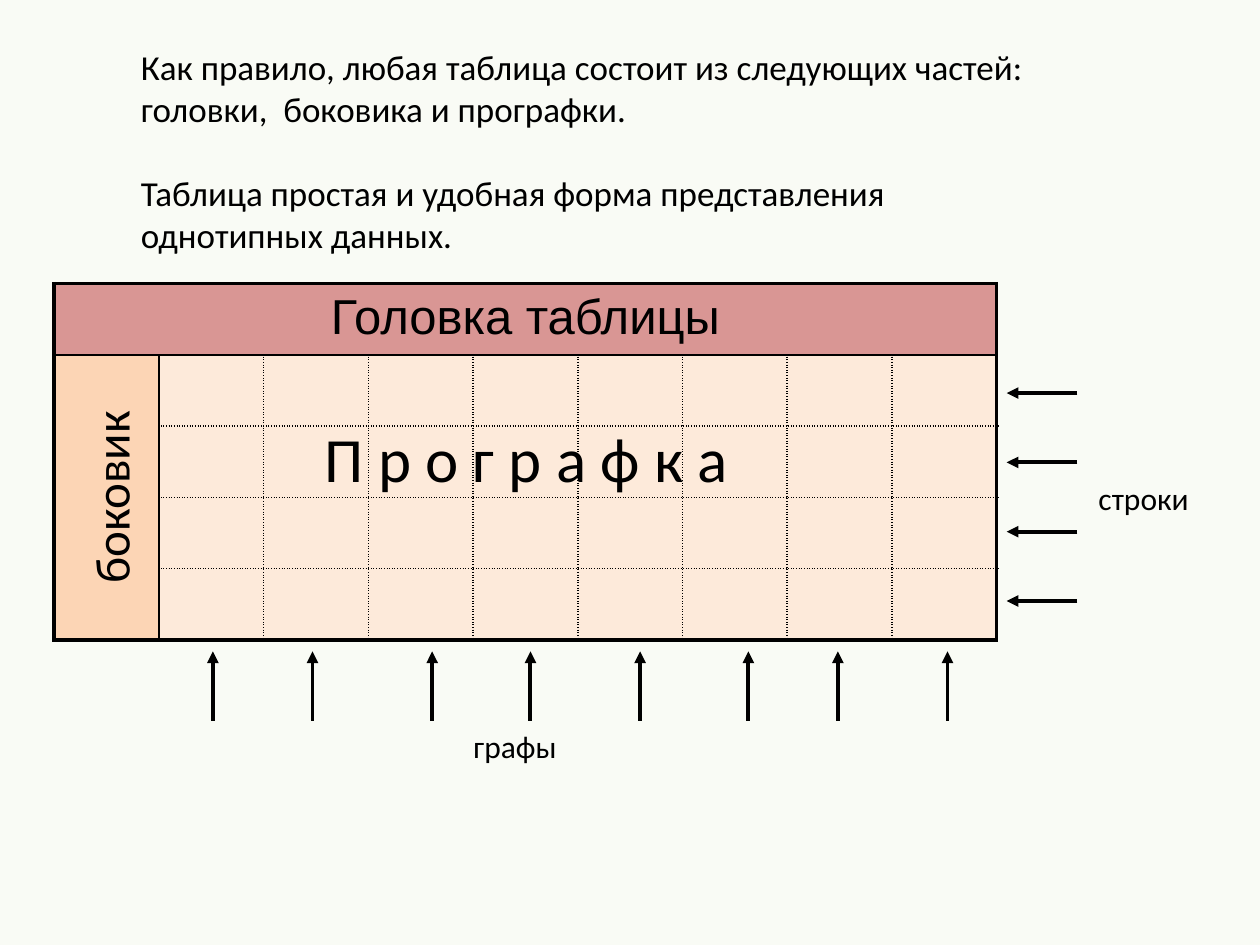
from lxml.etree import SubElement
from pptx import Presentation
from pptx.dml.color import RGBColor
from pptx.enum.shapes import MSO_CONNECTOR as Connector
from pptx.enum.text import PP_ALIGN as Align
from pptx.oxml.ns import qn
from pptx.util import Inches, Pt

# Content
INTRO = ["Как правило, любая таблица состоит из следующих частей: головки,  боковика и прографки.",
         "Таблица простая и удобная форма представления однотипных данных."]
HEADING = "Головка таблицы"
# paragraphs, (left, top, width, height), size name, format
LABELS = [
    (INTRO, (1.02, 0.31, 7.58, 1.78), "intro", {}),
    (["П р о г р а ф к а"], (2.48, 3.28, 4.57, 0.7), "body", {}),
    (["графы"], (3.66, 5.72, 1.26, 0.5), "note", {}),
    (["строки"], (8.62, 3.75, 1.26, 0.5), "note", {}),
    (["боковик"], (-0.19, 3.66, 2.13, 0.57), "part",
     {"rotation": 270, "alignment": Align.CENTER}),
]

# Layout, in inches
ROWS, COLUMNS = 5, 9
TABLE = (0.43, 2.25, 7.48, 2.83)
COLUMN_ARROWS = [1.69, 2.48, 3.43, 4.21, 5.08, 5.94, 6.65, 7.52]
ROW_ARROWS = [3.12 + 0.55 * row for row in range(ROWS - 1)]

THEME = {
    "colors": {"background": "F9FBF5", "ink": "000000", "head": "D99694",
               "side": "FCD5B5", "body": "FDEADA"},
    "sizes": {"intro": 20, "body": 36, "note": 18, "part": 28},
    "fonts": {"text": "Calibri", "head": "Arial"},
    "lines": {"outer": (2.25, "solid"), "inner": (1, "solid"), "grid": (1, "sysDot")},
}


def color(name):
    return RGBColor.from_string(THEME["colors"][name])


def write(paragraph, text, size, font="text", alignment=Align.LEFT):
    run = paragraph.add_run()
    run.text = text
    paragraph.alignment = alignment
    values = {"name": THEME["fonts"][font], "size": Pt(THEME["sizes"][size])}
    for name, value in values.items():
        setattr(run.font, name, value)
    run.font.color.rgb = color("ink")


def add_label(slide, texts, box, size, rotation=0, alignment=Align.LEFT):
    shape = slide.shapes.add_textbox(*map(Inches, box))
    shape.rotation = rotation
    frame = shape.text_frame
    frame.word_wrap = True
    for index, text in enumerate(texts):
        paragraph = frame.add_paragraph() if index else frame.paragraphs[0]
        if index:
            paragraph.space_before = Pt(24)
        write(paragraph, text, size, alignment=alignment)


def add_arrow(slide, start, end):
    arrow = slide.shapes.add_connector(Connector.STRAIGHT, *map(Inches, start + end))
    arrow.line.color.rgb = color("ink")
    arrow.line.width = Pt(THEME["lines"]["outer"][0])
    SubElement(arrow.line._get_or_add_ln(), qn("a:tailEnd"), type="triangle")
    SubElement(arrow._element.spPr, qn("a:effectLst"))


def edge_style(index, last):
    """Outer edges are thick, the edge after the head or side is thin, the rest dotted."""
    return "outer" if index in (0, last) else "inner" if index == 1 else "grid"


def set_border(cell, side, style):
    width, dash = THEME["lines"][style]
    line = SubElement(cell._tc.get_or_add_tcPr(), qn(f"a:ln{side}"), w=str(Pt(width)))
    fill = SubElement(line, qn("a:solidFill"))
    SubElement(fill, qn("a:srgbClr"), val=THEME["colors"]["ink"])
    SubElement(line, qn("a:prstDash"), val=dash)


def add_grid(slide):
    table = slide.shapes.add_table(ROWS, COLUMNS, *map(Inches, TABLE)).table
    table.first_row = table.horz_banding = False
    for column in table.columns:
        column.width = Inches(TABLE[2] / COLUMNS)
    for row in table.rows:
        row.height = Inches(TABLE[3] / ROWS)
    table.cell(0, 0).merge(table.cell(0, COLUMNS - 1))
    table.cell(1, 0).merge(table.cell(ROWS - 1, 0))
    for row in range(ROWS):
        for column in range(COLUMNS):
            cell = table.cell(row, column)
            part = "head" if row == 0 else "side" if column == 0 else "body"
            left, right = (0, COLUMNS) if part == "head" else (column, column + 1)
            top, bottom = (1, ROWS) if part == "side" else (row, row + 1)
            for side, index, last in (("L", left, COLUMNS), ("R", right, COLUMNS),
                                      ("T", top, ROWS), ("B", bottom, ROWS)):
                set_border(cell, side, edge_style(index, last))
            cell.fill.solid()
            cell.fill.fore_color.rgb = color(part)
    write(table.cell(0, 0).text_frame.paragraphs[0], HEADING, "part", "head", Align.CENTER)


def main():
    presentation = Presentation()
    presentation.slide_width, presentation.slide_height = Inches(10), Inches(7.5)
    slide = presentation.slides.add_slide(presentation.slide_layouts[6])
    slide.background.fill.solid()
    slide.background.fill.fore_color.rgb = color("background")

    # Table, then the labels over and around it
    add_grid(slide)
    for texts, box, size, values in LABELS:
        add_label(slide, texts, box, size, **values)

    # Arrows to the columns and rows
    for x in COLUMN_ARROWS:
        add_arrow(slide, (x, 5.72), (x, 5.17))
    for y in ROW_ARROWS:
        add_arrow(slide, (8.55, y), (7.99, y))

    presentation.save("out.pptx")


if __name__ == "__main__":
    main()
